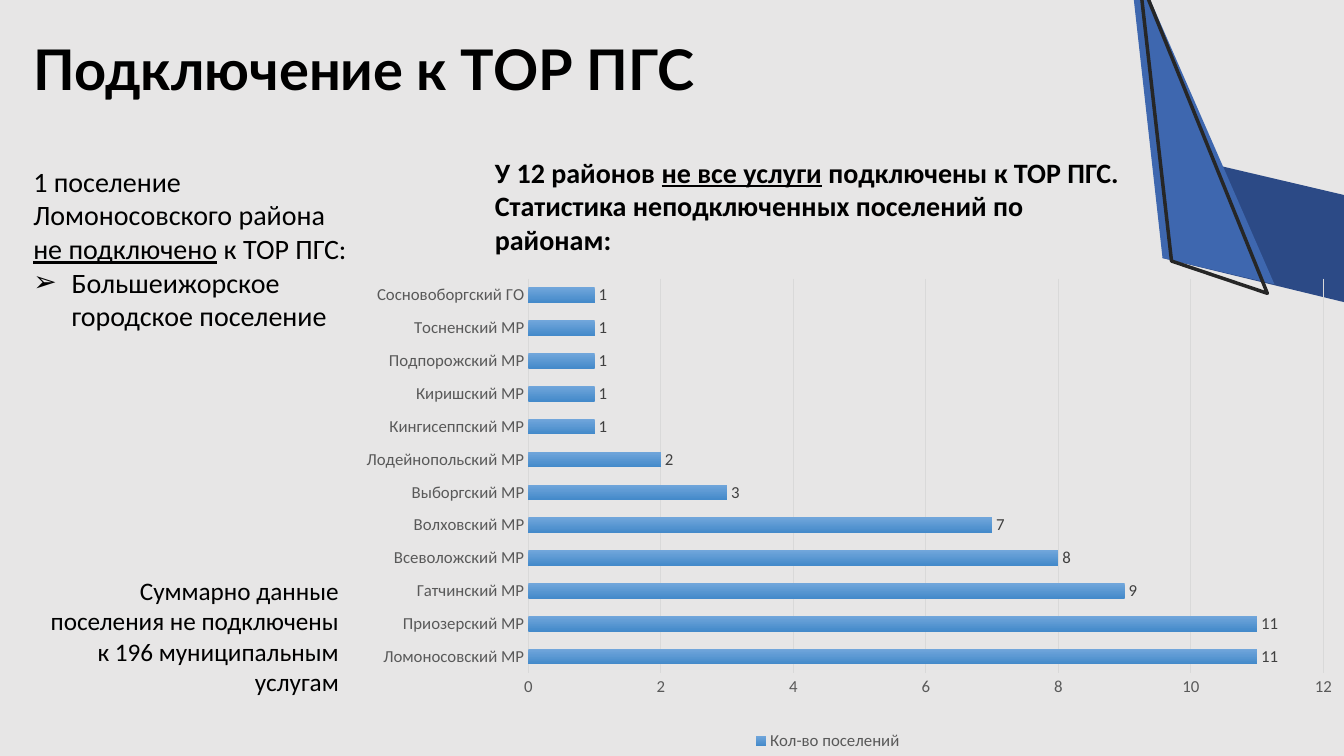
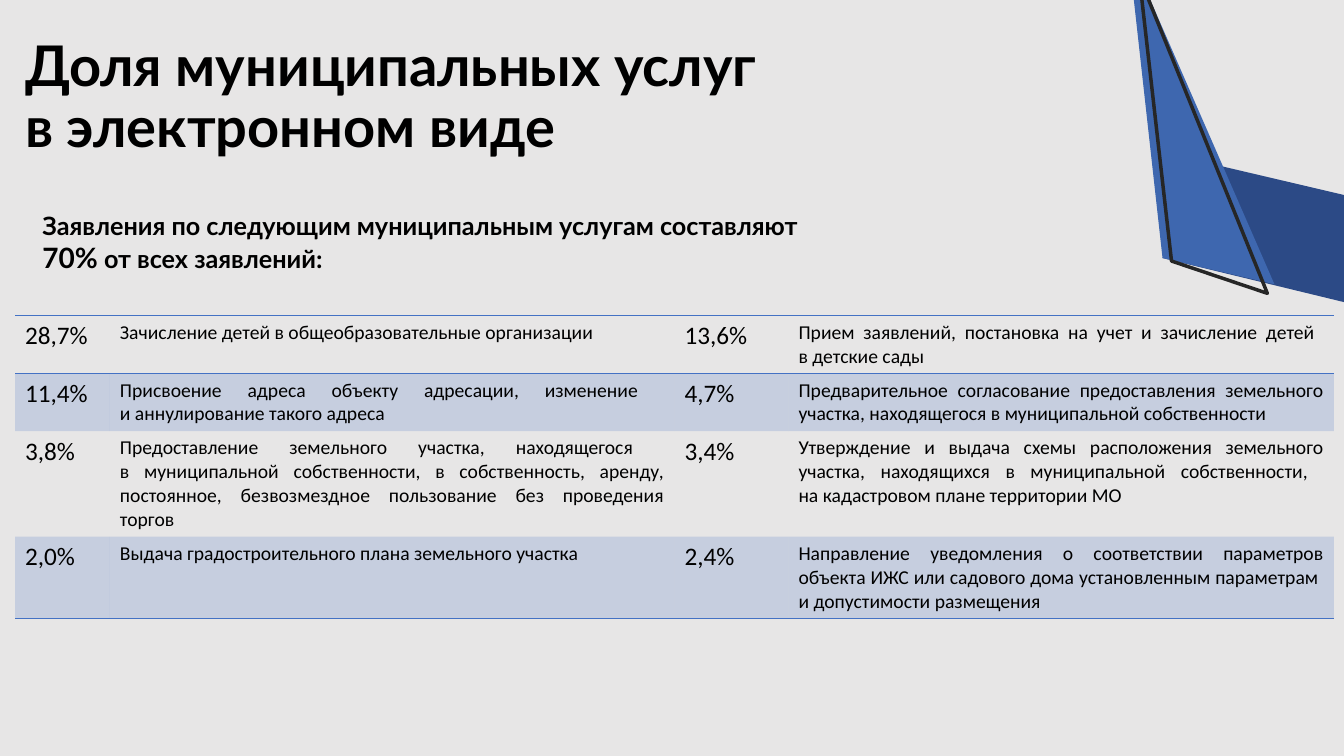
from copy import deepcopy
from typing import NamedTuple

from lxml import etree
from pptx import Presentation
from pptx.chart.data import CategoryChartData
from pptx.dml.color import RGBColor
from pptx.enum.chart import XL_CHART_TYPE as ChartType, XL_LABEL_POSITION as LabelPos
from pptx.enum.chart import XL_LEGEND_POSITION as LegendPos, XL_TICK_MARK as Tick
from pptx.enum.text import MSO_ANCHOR as Anchor, MSO_AUTO_SIZE as AutoSize
from pptx.enum.text import PP_ALIGN as Align
from pptx.oxml.ns import qn
from pptx.slide import Slide
from pptx.util import Inches, Pt

# Shared look
BACKGROUND, BLACK, WHITE = "E7E6E6", "000000", "FFFFFF"
NAVY, BLUE, OUTLINE = "2C4A86", "3E67AF", "262626"
ACCENT, GRID, AXIS_TEXT, LABEL_TEXT = "4472C4", "D9D9D9", "595959", "404040"
BAR_TOP, BAR_BOTTOM = "71A6DB", "448ACA"
HEAD_FONT, TEXT_FONT = "Lato", "Calibri"


class Box(NamedTuple):
    left: float
    top: float
    width: float
    height: float

    def emu(self) -> list:
        return [Inches(v) for v in self]


class Style(NamedTuple):
    size: float
    font: str = TEXT_FONT
    bold: bool = False
    color: str = BLACK


class Span(NamedTuple):
    text: str
    underline: bool = False
    size: float | None = None


class Ribbon(NamedTuple):
    points: list
    fill: str | None = None
    line: str | None = None


class Share(NamedTuple):
    percent: str
    service: str


TITLE = Style(40, HEAD_FONT, True)
LEAD = Style(18, HEAD_FONT, True)
HEADING = Style(20, bold=True)
TEXT, NOTE, SERVICE = Style(20), Style(18), Style(14)

RIBBONS = [
    Ribbon([(14.63, 2.24), (12.12, 1.65), (11.53, 2.56), (14.33, 3.24)], fill=NAVY),
    Ribbon([(11.53, 2.56), (11.19, -0.5), (12.64, 2.82)], fill=BLUE),
    Ribbon([(11.62, 2.59), (11.3, -0.23), (12.57, 2.91)], line=OUTLINE),
]

DISTRICTS = {
    "Ломоносовский МР": 11, "Приозерский МР": 11, "Гатчинский МР": 9,
    "Всеволожский МР": 8, "Волховский МР": 7, "Выборгский МР": 3,
    "Лодейнопольский МР": 2, "Кингисеппский МР": 1, "Киришский МР": 1,
    "Подпорожский МР": 1, "Тосненский МР": 1, "Сосновоборгский ГО": 1,
}

SHARES = [
    (Share("28,7%", "Зачисление детей в общеобразовательные организации"),
     Share("13,6%", "Прием заявлений, постановка на учет и зачисление детей \n"
                    "в детские сады")),
    (Share("11,4%", "Присвоение адреса объекту адресации, изменение \n"
                    "и аннулирование такого адреса"),
     Share("4,7%", "Предварительное согласование предоставления земельного участка, "
                   "находящегося в муниципальной собственности")),
    (Share("3,8%", "Предоставление земельного участка, находящегося \n"
                   "в муниципальной собственности, в собственность, аренду, "
                   "постоянное, безвозмездное пользование без проведения торгов"),
     Share("3,4%", "Утверждение и выдача схемы расположения земельного участка, "
                   "находящихся в муниципальной собственности, \n"
                   "на кадастровом плане территории МО")),
    (Share("2,0%", "Выдача градостроительного плана земельного участка"),
     Share("2,4%", "Направление уведомления о соответствии параметров объекта ИЖС "
                   "или садового дома установленным параметрам \n"
                   "и допустимости размещения")),
]
COLUMN_WIDTHS = [0.94, 5.6, 1.13, 5.41]
ROW_HEIGHTS = [0.5, 0.52, 0.51, 0.51]


def rgb(color: str) -> RGBColor:
    return RGBColor.from_string(color)


def set_font(font, style: Style) -> None:
    font.size, font.name, font.bold = Pt(style.size), style.font, style.bold
    font.color.rgb = rgb(style.color)


def write(p, spans: list[Span], style: Style, align: Align = Align.LEFT) -> None:
    """Write formatted runs; a newline becomes a line break."""
    p.alignment = align
    p.space_before = Pt(0)
    for span in spans:
        for i, part in enumerate(span.text.split("\n")):
            if i:
                p.add_line_break()
            if part:
                r = p.add_run()
                r.text = part
                set_font(r.font, style._replace(size=span.size or style.size))
                if span.underline:
                    r.font.underline = True
    # Breaks take the size of the text around them
    for br in p._p.findall(qn("a:br")):
        br.append(deepcopy(p.runs[0]._r.rPr))


def set_bullet(p, char: str | None, indent: float = 0) -> None:
    pPr = p._p.get_or_add_pPr()
    pPr.set("marL", str(Inches(indent)))
    pPr.set("indent", str(-Inches(indent)))
    if char:
        etree.SubElement(pPr, qn("a:buChar"), char=char)
    else:
        etree.SubElement(pPr, qn("a:buNone"))


def solid_fill(parent, color: str, alpha: int = 100) -> None:
    fill = etree.SubElement(parent, qn("a:solidFill"))
    clr = etree.SubElement(fill, qn("a:srgbClr"), val=color)
    if alpha < 100:
        etree.SubElement(clr, qn("a:alpha"), val=str(alpha * 1000))


def place(sp, box: Box):
    """Position a text shape and return its prepared text frame."""
    sp.left, sp.top, sp.width, sp.height = box.emu()
    tf = sp.text_frame
    tf.word_wrap = True
    tf.auto_size = AutoSize.NONE
    tf.vertical_anchor = Anchor.TOP
    return tf


def add_text(slide: Slide, box: Box, spans: list[Span], style: Style,
             align: Align = Align.LEFT) -> None:
    tf = place(slide.shapes.add_textbox(*box.emu()), box)
    write(tf.paragraphs[0], spans, style, align)


def set_title(slide: Slide, text: str, box: Box) -> None:
    p = place(slide.shapes.title, box).paragraphs[0]
    write(p, [Span(text)], TITLE)
    p.line_spacing = 0.9
    for r in p.runs:
        ln = etree.Element(qn("a:ln"), w=str(Pt(0.75)))
        solid_fill(ln, WHITE)
        r._r.rPr.insert(0, ln)


def decorate_master(prs, slide: Slide) -> None:
    """Put the background and the corner ribbons on the master."""
    master = prs.slide_master
    fill = master.background.fill
    fill.solid()
    fill.fore_color.rgb = rgb(BACKGROUND)
    for ribbon in RIBBONS:
        points = [(Inches(x), Inches(y)) for x, y in ribbon.points]
        builder = slide.shapes.build_freeform(*points[0])
        builder.add_line_segments(points[1:], close=True)
        sp = builder.convert_to_shape()
        sp.shadow.inherit = False
        if ribbon.fill:
            sp.fill.solid()
            sp.fill.fore_color.rgb = rgb(ribbon.fill)
        else:
            sp.fill.background()
        if ribbon.line:
            sp.line.color.rgb = rgb(ribbon.line)
            sp.line.width = Pt(2.5)
        else:
            sp.line.fill.background()
        master.shapes.element.append(sp.element)


def add_district_chart(slide: Slide, box: Box) -> None:
    data = CategoryChartData()
    data.categories = list(DISTRICTS)
    data.add_series("Кол-во поселений", list(DISTRICTS.values()))
    chart = slide.shapes.add_chart(ChartType.BAR_CLUSTERED, *box.emu(), data).chart
    chart.has_title = False
    set_font(chart.font, Style(10))
    axis_style = Style(12, color=AXIS_TEXT)

    # Axes
    cat, val = chart.category_axis, chart.value_axis
    for axis in (cat, val):
        axis.major_tick_mark = axis.minor_tick_mark = Tick.NONE
        set_font(axis.tick_labels.font, axis_style)
    cat.format.line.color.rgb = rgb(GRID)
    cat.format.line.width = Pt(1)
    val.minimum_scale, val.maximum_scale, val.major_unit = 0, 12, 2
    val.format.line.fill.background()
    val.has_major_gridlines = True
    val.major_gridlines.format.line.color.rgb = rgb(GRID)
    val.major_gridlines.format.line.width = Pt(0.75)

    # Legend
    chart.has_legend = True
    chart.legend.position = LegendPos.BOTTOM
    chart.legend.include_in_layout = False
    set_font(chart.legend.font, axis_style)

    # Bars and labels
    plot = chart.plots[0]
    plot.gap_width, plot.overlap, plot.vary_by_categories = 115, -20, False
    fill = plot.series[0].format.fill
    fill.gradient()
    fill.gradient_angle = 270
    for stop, color in zip(fill.gradient_stops, (BAR_TOP, BAR_BOTTOM)):
        stop.color.rgb = rgb(color)
    plot.has_data_labels = True
    labels = plot.data_labels
    labels.show_value = True
    labels.position = LabelPos.OUTSIDE_END
    set_font(labels.font, Style(12, color=LABEL_TEXT))

    # Plot area as fractions of the chart
    area = chart.element.find(".//" + qn("c:plotArea"))
    for old in area.findall(qn("c:layout")):
        area.remove(old)
    layout = etree.Element(qn("c:layout"))
    manual = etree.SubElement(layout, qn("c:manualLayout"))
    for tag, value in [("layoutTarget", "inner"), ("xMode", "edge"), ("yMode", "edge"),
                       ("x", "0.21"), ("y", "0.07"), ("w", "0.77"), ("h", "0.77")]:
        etree.SubElement(manual, qn("c:" + tag), val=value)
    area.insert(0, layout)


def format_cell(cell, banded: bool, edges: list[str]) -> None:
    """Draw the given border edges (lnT, lnB) and the band tint."""
    tcPr = cell._tc.get_or_add_tcPr()
    for edge in edges:
        solid_fill(etree.SubElement(tcPr, qn("a:" + edge), w=str(Pt(1))), ACCENT)
    if banded:
        solid_fill(tcPr, ACCENT, 20)
    else:
        cell.fill.background()


def add_share_table(slide: Slide, box: Box) -> None:
    table = slide.shapes.add_table(len(SHARES), len(COLUMN_WIDTHS), *box.emu()).table
    table.first_row = table.horz_banding = False
    style_id = table._tbl.tblPr.find(qn("a:tableStyleId"))
    style_id.text = "{2D5ABB26-0587-4C30-8999-92F81FD0307C}"
    for column, width in zip(table.columns, COLUMN_WIDTHS):
        column.width = Inches(width)
    edges = {0: ["lnT", "lnB"], len(SHARES) - 1: ["lnB"]}
    for i, (pair, height) in enumerate(zip(SHARES, ROW_HEIGHTS)):
        table.rows[i].height = Inches(height)
        texts = [text for share in pair for text in share]
        for j, text in enumerate(texts):
            cell = table.cell(i, j)
            style, align = (SERVICE, Align.JUSTIFY) if j % 2 else (NOTE, Align.LEFT)
            write(cell.text_frame.paragraphs[0], [Span(text)], style, align)
            format_cell(cell, i % 2 == 1, edges.get(i, []))


def build_connection_slide(slide: Slide) -> None:
    set_title(slide, "Подключение к ТОР ПГС", Box(0.23, 0.37, 11.75, 0.99))
    tf = place(slide.placeholders[1], Box(0.23, 1.58, 3.66, 1.78))
    p = tf.paragraphs[0]
    write(p, [Span("1 поселение Ломоносовского района \n"),
              Span("не подключено", underline=True), Span(" к ТОР ПГС:")], TEXT)
    set_bullet(p, None)
    p = tf.add_paragraph()
    write(p, [Span("Большеижорское \nгородское поселение")], TEXT)
    set_bullet(p, "➢", 0.38)
    add_text(slide, Box(4.81, 1.49, 6.52, 1.11),
             [Span("У 12 районов "), Span("не все услуги", underline=True),
              Span(" подключены к ТОР ПГС. Статистика неподключенных поселений "
                   "по районам:")], HEADING)
    add_text(slide, Box(0.33, 5.66, 3.13, 1.31),
             [Span("Суммарно данные поселения не подключены к 196 муниципальным услугам")],
             NOTE, Align.RIGHT)
    add_district_chart(slide, Box(3.09, 2.41, 10.24, 5.08))


def build_share_slide(slide: Slide) -> None:
    set_title(slide, "Доля муниципальных услуг \nв электронном виде",
              Box(0.15, 0.33, 11.21, 0.87))
    p = place(slide.placeholders[1], Box(0.32, 2.04, 8.19, 0.74)).paragraphs[0]
    write(p, [Span("Заявления по следующим муниципальным услугам составляют \n"),
              Span("70%", size=20), Span(" от всех заявлений:")], LEAD)
    set_bullet(p, None)
    add_share_table(slide, Box(0.15, 3.13, 13.08, 2.04))


def main() -> None:
    prs = Presentation()
    prs.slide_width, prs.slide_height = Inches(13.33), Inches(7.5)
    layout = prs.slide_layouts.get_by_name("Title and Content")
    slides = [prs.slides.add_slide(layout) for _ in range(2)]
    decorate_master(prs, slides[0])
    build_connection_slide(slides[0])
    build_share_slide(slides[1])
    prs.save("out.pptx")


if __name__ == "__main__":
    main()
